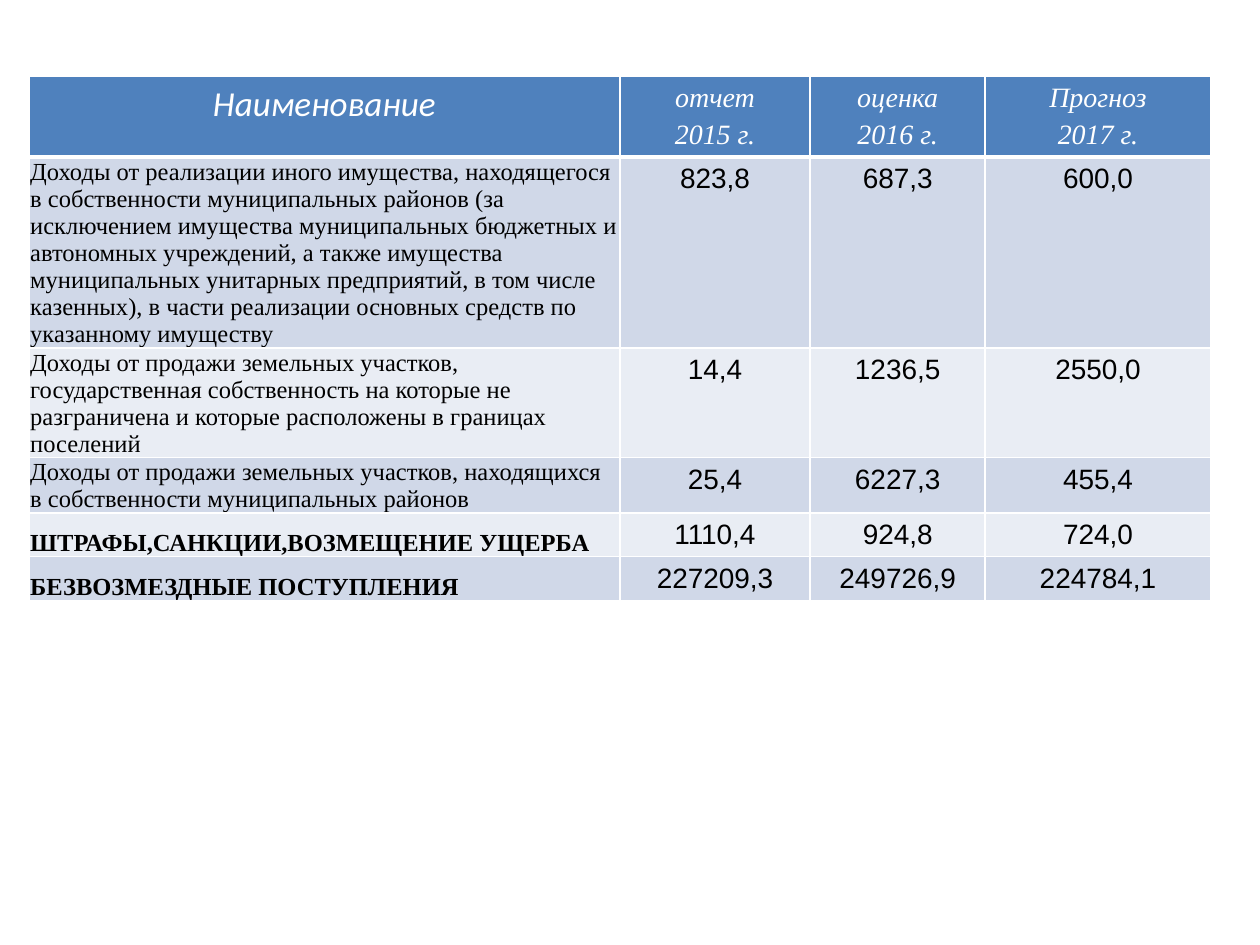
"""Build a slide with a table of municipal revenues for 2015 to 2017."""
import dataclasses

import lxml.etree
import pptx
import pptx.dml.color
import pptx.enum.text
import pptx.oxml.ns
import pptx.util

SLIDE_WIDTH = pptx.util.Inches(10)
SLIDE_HEIGHT = pptx.util.Inches(7.5)
COLUMN_SHARES = (0.469, 0.151, 0.139, 0.179)
HEADER_SHARE = 0.07
HEADER_FILL = "4F81BD"
BAND_FILLS = ("D0D8E8", "E9EDF4")
WHITE = "FFFFFF"
SERIF = "Times New Roman"


@dataclasses.dataclass(frozen=True)
class Revenue:
    """One revenue line, with its height as a share of the slide height."""

    title: str
    amounts: tuple[str, str, str]
    share: float
    bold: bool = False


PERIODS = ("отчет\n2015 г.", "оценка\n2016 г.", "Прогноз\n2017 г.")
REVENUES = (
    Revenue(
        "Доходы от реализации иного имущества, находящегося в собственности "
        "муниципальных районов (за исключением имущества муниципальных бюджетных "
        "и автономных учреждений, а также имущества муниципальных унитарных "
        "предприятий, в том числе казенных), в части реализации основных средств "
        "по указанному имуществу",
        ("823,8", "687,3", "600,0"), 0.165),
    Revenue(
        "Доходы от продажи земельных участков, государственная собственность на "
        "которые не разграничена и которые расположены в границах поселений",
        ("14,4", "1236,5", "2550,0"), 0.095),
    Revenue(
        "Доходы от продажи земельных участков, находящихся в собственности "
        "муниципальных районов",
        ("25,4", "6227,3", "455,4"), 0.048),
    Revenue("ШТРАФЫ,САНКЦИИ,ВОЗМЕЩЕНИЕ УЩЕРБА",
            ("1110,4", "924,8", "724,0"), 0.04, bold=True),
    Revenue("БЕЗВОЗМЕЗДНЫЕ ПОСТУПЛЕНИЯ",
            ("227209,3", "249726,9", "224784,1"), 0.04, bold=True),
)


def color(value: str) -> pptx.dml.color.RGBColor:
    """Turn a hex string into a colour."""
    return pptx.dml.color.RGBColor.from_string(value)


def write(frame, text: str, *, font: str, size: float, ink: str = "000000",
          bold: bool = False, italic: bool = False, centered: bool = True,
          before: float = 0) -> None:
    """Write each line of the text as a formatted paragraph."""
    align = pptx.enum.text.PP_ALIGN
    for index, line in enumerate(text.split("\n")):
        paragraph = frame.add_paragraph() if index else frame.paragraphs[0]
        paragraph.alignment = align.CENTER if centered else align.LEFT
        paragraph.space_before = pptx.util.Pt(before)
        run = paragraph.add_run()
        run.text = line
        run.font.name = font
        run.font.size = pptx.util.Pt(size)
        run.font.bold = bold
        run.font.italic = italic
        run.font.color.rgb = color(ink)


def paint(cell, fill: str, top: float = 1, bottom: float = 1) -> None:
    """Give a cell white borders, with widths in points, and a solid fill."""
    properties = cell._tc.get_or_add_tcPr()
    qn = pptx.oxml.ns.qn
    for side, width in (("L", 1), ("R", 1), ("T", top), ("B", bottom)):
        border = lxml.etree.SubElement(
            properties, qn(f"a:ln{side}"), w=str(pptx.util.Pt(width)))
        solid = lxml.etree.SubElement(border, qn("a:solidFill"))
        lxml.etree.SubElement(solid, qn("a:srgbClr"), val=WHITE)
    cell.fill.solid()
    cell.fill.fore_color.rgb = color(fill)


def fill_header(cells) -> None:
    """Fill the heading row."""
    for cell in cells:
        paint(cell, HEADER_FILL, bottom=3)
    write(cells[0].text_frame, "Наименование", font="Calibri", size=20,
          ink=WHITE, italic=True, before=4)
    for cell, period in zip(cells[1:], PERIODS):
        write(cell.text_frame, period, font=SERIF, size=16,
              ink=WHITE, italic=True, before=3.2)


def fill_revenue(cells, revenue: Revenue, fill: str, top: float) -> None:
    """Fill one revenue row."""
    for cell in cells:
        paint(cell, fill, top=top)
    title = cells[0]
    title.vertical_anchor = pptx.enum.text.MSO_ANCHOR.BOTTOM
    title.margin_left = title.margin_right = title.margin_top = pptx.util.Inches(0.01)
    title.margin_bottom = 0
    write(title.text_frame, revenue.title, font=SERIF, size=14,
          bold=revenue.bold, centered=False)
    for cell, amount in zip(cells[1:], revenue.amounts):
        write(cell.text_frame, amount, font="Arial", size=16)


def main() -> None:
    """Build and save the presentation."""
    deck = pptx.Presentation()
    deck.slide_width, deck.slide_height = SLIDE_WIDTH, SLIDE_HEIGHT
    slide = deck.slides.add_slide(deck.slide_layouts[6])
    row_shares = (HEADER_SHARE, *(revenue.share for revenue in REVENUES))
    frame = slide.shapes.add_table(
        len(row_shares), len(COLUMN_SHARES),
        int(SLIDE_WIDTH * 0.023), int(SLIDE_HEIGHT * 0.081),
        int(SLIDE_WIDTH * sum(COLUMN_SHARES)), int(SLIDE_HEIGHT * sum(row_shares)))
    table = frame.table
    for column, share in zip(table.columns, COLUMN_SHARES):
        column.width = int(SLIDE_WIDTH * share)
    for row, share in zip(table.rows, row_shares):
        row.height = int(SLIDE_HEIGHT * share)
    frame.height = int(SLIDE_HEIGHT * 0.597)

    header, *body = (list(row.cells) for row in table.rows)
    fill_header(header)
    for index, (cells, revenue) in enumerate(zip(body, REVENUES)):
        fill_revenue(cells, revenue, BAND_FILLS[index % 2], top=1 if index else 3)
    deck.save("out.pptx")


if __name__ == "__main__":
    main()
